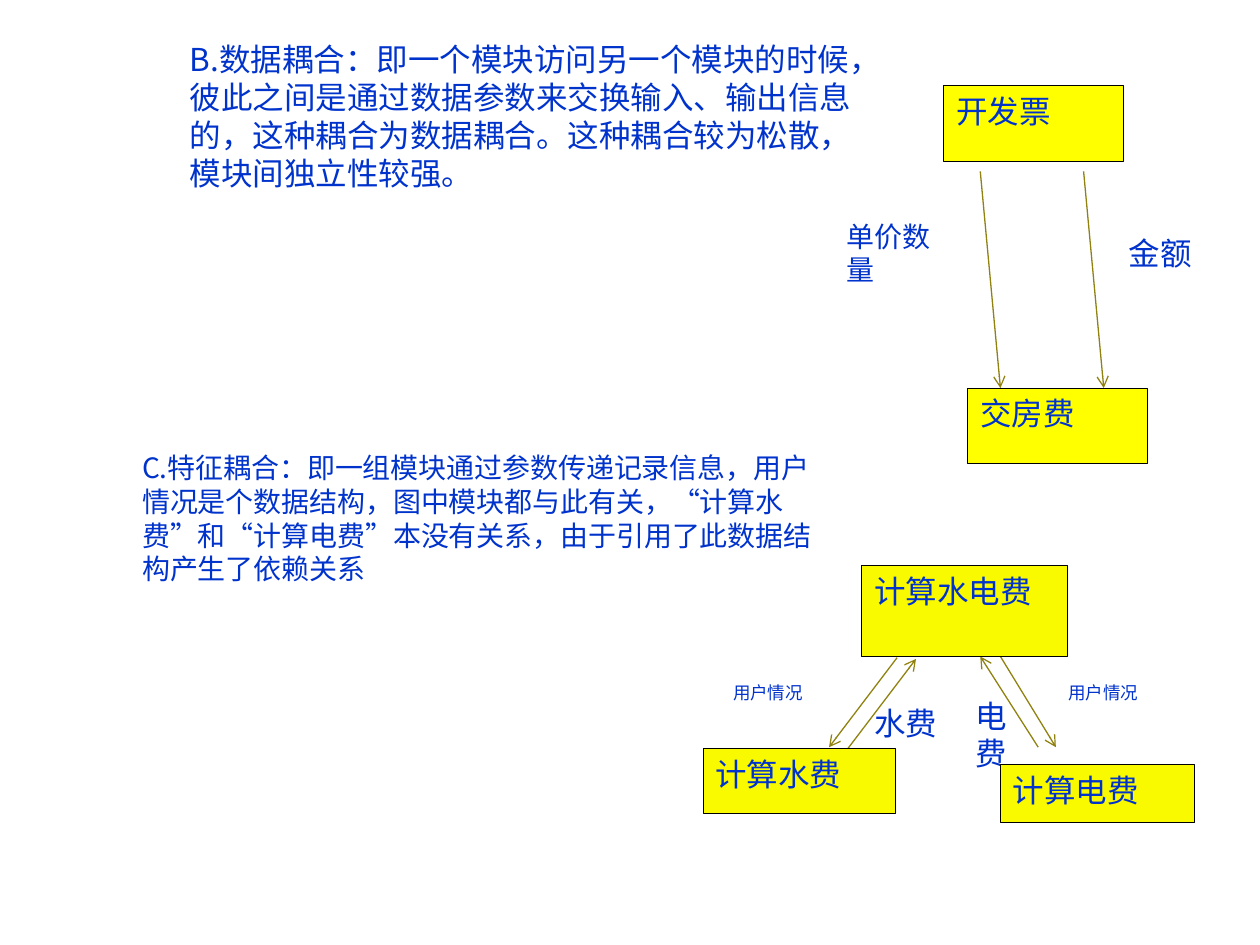
from lxml import etree
from pptx import Presentation, util as u
from pptx.dml.color import RGBColor
from pptx.enum import shapes, text
from pptx.oxml.ns import qn

# Grid of square cells: 100 columns by 75 rows
COLS, ROWS = 100, 75
deck = Presentation()
deck.slide_width, deck.slide_height = u.Inches(10), u.Inches(7.5)
cell = deck.slide_width / COLS
slide = deck.slides.add_slide(deck.slide_layouts[6])

BLUE, OLIVE, BLACK, WHITE = "0033CC", "908210", "000000", "FFFFFF"
BRIGHT, LEMON = "FFFF00", "F9F900"
CJK = "Noto Sans CJK SC"


def grid(*spots):
    return [u.Emu(round(spot * cell)) for spot in spots]


def write(shape, words, size, face="Arial", wrap=True):
    frame = shape.text_frame
    frame.word_wrap = wrap
    frame.vertical_anchor = text.MSO_ANCHOR.TOP
    para = frame.paragraphs[0]
    para.alignment = text.PP_ALIGN.LEFT
    run = para.add_run()
    run.text = words
    for key, val in {"size": u.Pt(size), "name": face}.items():
        setattr(run.font, key, val)
    run.font.color.rgb = RGBColor.from_string(BLUE)
    east = etree.SubElement(run.font._element, qn("a:ea"))
    east.set("typeface", CJK)


# Arrows: the data passed between modules
arrows = [
    (77.8, 13.6, 79.4, 30.8), (86, 13.6, 87.6, 30.8),
    (67.3, 59.4, 72.7, 52.3), (71.2, 52.2, 65.8, 59.3),
    (79.4, 52.1, 83.8, 59.3), (82.4, 59.3, 77.8, 52.1),
]
for ends in arrows:
    line = slide.shapes.add_connector(shapes.MSO_CONNECTOR.STRAIGHT, *grid(*ends))
    line.line.width = u.Pt(0.75)
    line.line.color.rgb = RGBColor.from_string(OLIVE)
    etree.SubElement(line.line._get_or_add_ln(), qn("a:tailEnd")).set("type", "arrow")
    etree.SubElement(line._element.spPr, qn("a:effectLst"))

# Definitions and names of the data
notes = [
    ("B.数据耦合：即一个模块访问另一个模块的时候，彼此之间是通过数据参数来交换输入、"
     "输出信息的，这种耦合为数据耦合。这种耦合较为松散，模块间独立性较强。",
     (14.1, 2.7, 55.6, 13.1), 18, CJK, True),
    ("C.特征耦合：即一组模块通过参数传递记录信息，用户情况是个数据结构，图中模块都与此有关，"
     "“计算水费”和“计算电费”本没有关系，由于引用了此数据结构产生了依赖关系",
     (10.3, 35.3, 55.6, 11.8), 16, CJK, True),
    ("单价数量", (66.2, 16.9, 10.6, 6.4), 16, CJK, True),
    ("金额", (88.6, 18.1, 7, 4), 18, "Arial", False),
    ("水费", (68.4, 55.4, 7, 4), 18, "Arial", False),
    ("电费", (76.4, 54.8, 4.5, 3.1), 18, "Arial", True),
]
for words, area, size, face, wrap in notes:
    write(slide.shapes.add_textbox(*grid(*area)), words, size, face, wrap)

# Modules, and the borderless labels of the shared record
boxes = [
    ("开发票", (74.9, 6.8, 14.3, 6), BRIGHT, BLACK, 18),
    ("交房费", (76.8, 30.8, 14.3, 6), BRIGHT, BLACK, 18),
    ("计算水电费", (68.4, 44.9, 16.3, 7.2), LEMON, BLACK, 18),
    ("计算水费", (55.8, 59.4, 15.3, 5.2), LEMON, BLACK, 18),
    ("计算电费", (79.4, 60.7, 15.4, 4.6), LEMON, BLACK, 18),
    ("用户情况", (57.2, 53.6, 10.4, 2.6), WHITE, None, 10),
    ("用户情况", (83.8, 53.6, 10.4, 2.6), WHITE, None, 10),
]
for words, area, fill, edge, size in boxes:
    box = slide.shapes.add_shape(shapes.MSO_SHAPE.RECTANGLE, *grid(*area))
    box.shadow.inherit = False
    box.fill.solid()
    box.fill.fore_color.rgb = RGBColor.from_string(fill)
    if edge:
        box.line.width = u.Pt(0.5)
        box.line.color.rgb = RGBColor.from_string(edge)
    else:
        box.line.fill.background()
    write(box, words, size)

deck.save("out.pptx")
